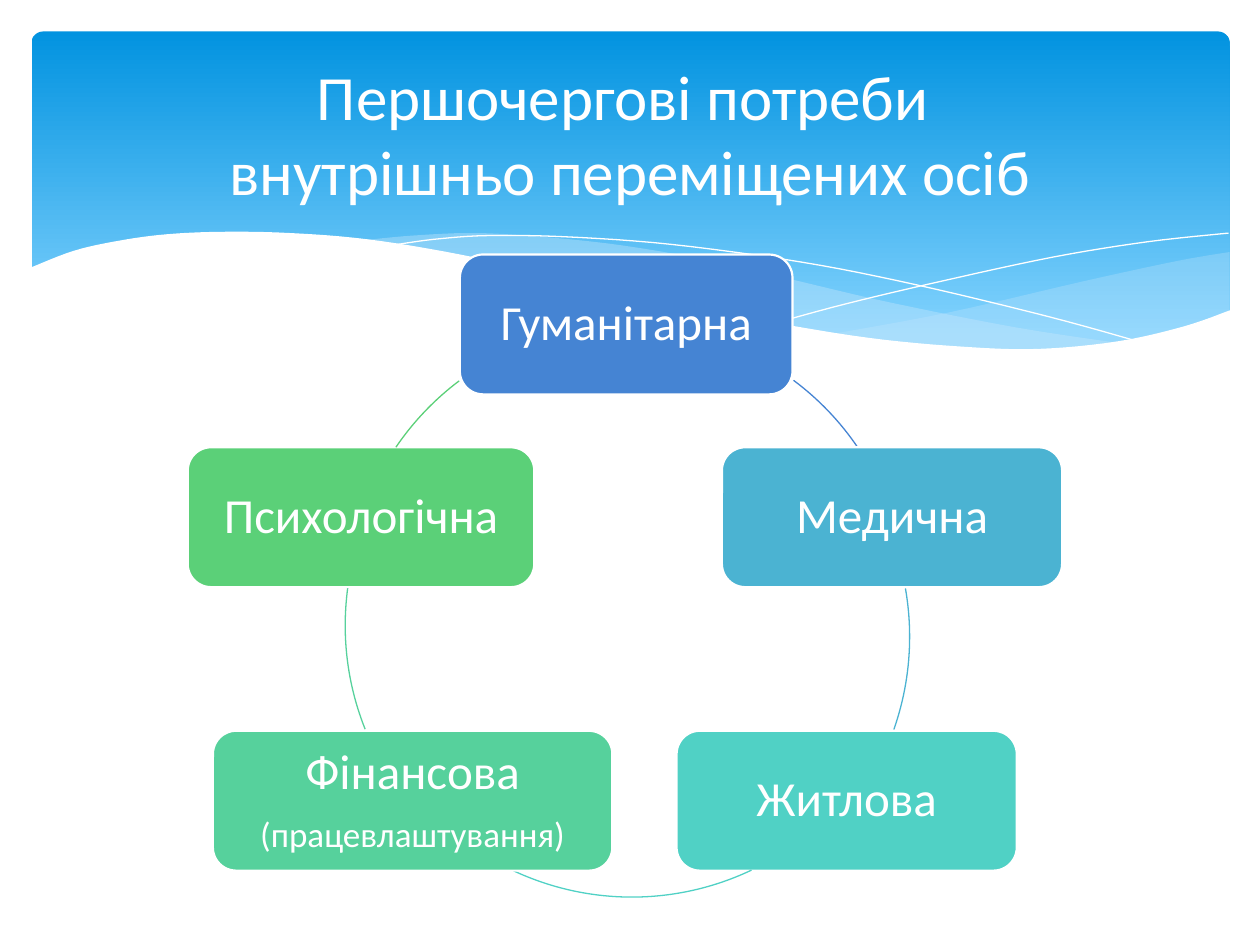
from pptx import Presentation
from pptx.dml.color import RGBColor
from pptx.enum.shapes import MSO_SHAPE as Shape
from pptx.enum.text import MSO_ANCHOR as Anchor, PP_ALIGN as Align
from pptx.oxml import parse_xml
from pptx.oxml.ns import nsdecls
from pptx.util import Inches, Pt

COLUMNS, ROWS = 100, 75
WHITE, MIST = "FFFFFF", "C6E7FC"


def color(value):
    return RGBColor.from_string(value)


def set_all(target, values):
    for name, value in values.items():
        setattr(target, name, value)


def smooth(points, steps=6):
    """Sample a Catmull-Rom curve that runs through the points."""
    ends = [points[0], *points, points[-1]]
    curve = [points[0]]
    for a, b, c, d in zip(ends, ends[1:], ends[2:], ends[3:]):
        for step in range(1, steps + 1):
            t = step / steps
            curve.append(tuple(
                (2 * q + (r - p) * t + (2 * p - 5 * q + 4 * r - s) * t ** 2
                 + (3 * q - p - 3 * r + s) * t ** 3) / 2
                for p, q, r, s in zip(a, b, c, d)))
    return curve


class Deck:
    font = "Calibri"

    def __init__(self):
        self.presentation = Presentation()
        set_all(self.presentation, {"slide_width": Inches(10), "slide_height": Inches(7.5)})
        self.slide = self.presentation.slides.add_slide(self.presentation.slide_layouts[5])
        self.column = self.presentation.slide_width / COLUMNS
        self.row = self.presentation.slide_height / ROWS

    def place(self, column, row, columns, rows):
        return [int(column * self.column), int(row * self.row),
                int(columns * self.column), int(rows * self.row)]

    def paint(self, shape, fill=None, alpha=100, line=None, width=0):
        shape.shadow.inherit = False
        if fill:
            shape.fill.solid()
            shape.fill.fore_color.rgb = color(fill)
            if alpha < 100:
                tint = shape.element.spPr.find(".//{*}srgbClr")
                tint.append(parse_xml(f'<a:alpha {nsdecls("a")} val="{alpha * 1000}"/>'))
        else:
            shape.fill.background()
        if line:
            shape.line.color.rgb = color(line)
            shape.line.width = Pt(width)
        else:
            shape.line.fill.background()

    def label(self, paragraph, text, size, **format_values):
        paragraph.text = text
        set_all(paragraph, {"alignment": Align.CENTER, **format_values})
        set_all(paragraph.font, {"name": self.font, "size": Pt(size), "bold": False})
        paragraph.font.color.rgb = color(WHITE)

    def title(self, text, area):
        shape = self.slide.shapes.title
        set_all(shape, dict(zip(("left", "top", "width", "height"), self.place(*area))))
        set_all(shape.text_frame, {"vertical_anchor": Anchor.MIDDLE, "word_wrap": True})
        self.label(shape.text_frame.paragraphs[0], text, 36)
        # Keep the title in front of everything drawn before it
        self.slide.shapes.element.append(shape.element)

    def banner(self, area, top, bottom):
        shape = self.slide.shapes.add_shape(Shape.ROUNDED_RECTANGLE, *self.place(*area))
        self.paint(shape)
        shape.adjustments[0] = 0.034
        shape.fill.gradient()
        shape.fill.gradient_angle = 270
        for stop, tint, position in zip(shape.fill.gradient_stops, (top, bottom), (0, 0.9)):
            stop.color.rgb = color(tint)
            stop.position = position

    def wave(self, *edges, **style):
        points = [self.place(x, y, 0, 0)[:2] for edge in edges for x, y in smooth(edge)]
        builder = self.slide.shapes.build_freeform(*points[0])
        builder.add_line_segments(points[1:], close=len(edges) > 1)
        self.paint(builder.convert_to_shape(), **style)

    def box(self, area, fill, lines):
        shape = self.slide.shapes.add_shape(Shape.ROUNDED_RECTANGLE, *self.place(*area))
        self.paint(shape, fill, line=WHITE, width=1.25)
        frame = shape.text_frame
        margins = dict.fromkeys(
            ("margin_left", "margin_top", "margin_right", "margin_bottom"), Inches(0.12))
        set_all(frame, {"word_wrap": True, "vertical_anchor": Anchor.MIDDLE, **margins})
        for index, (text, size) in enumerate(lines):
            paragraph = frame.add_paragraph() if index else frame.paragraphs[0]
            self.label(paragraph, text, size, line_spacing=0.9, space_after=Pt(size * 0.35))

    def arc(self, center, start, end, line, radius=22.15):
        x, y = center
        shape = self.slide.shapes.add_shape(
            Shape.ARC, *self.place(x - radius, y - radius, 2 * radius, 2 * radius))
        # Arc angles count 60000 units per degree, adjustments 100000 per one
        for index, degrees in enumerate((start, end)):
            shape.adjustments[index] = degrees * 0.6
        self.paint(shape, line=line, width=0.75)


def main():
    deck = Deck()

    # Header with its waves
    deck.banner((2.5, 2.5, 95.1, 27), "0293E0", "83D3FE")
    deck.wave([(97.6, 20), (93.5, 20.7), (86.1, 22.3), (75.3, 24.8), (66.1, 26.5)],
              [(66.1, 26.5), (71.9, 27.2), (76.9, 27.7), (81.4, 27.7), (86.3, 27.5),
               (90.5, 26.9), (94.2, 25.9), (97.6, 24.7)], fill=MIST, alpha=29)
    deck.wave([(89.3, 27.3), (80.7, 26), (70.6, 24), (62.9, 22.2), (56.9, 20.8),
               (50.2, 19.6), (44.2, 18.9), (38, 18.5), (32.8, 18.7), (28.6, 19.1)],
              [(28.6, 19.1), (36.2, 20.3), (44.9, 22.2), (56.6, 24.8), (66.5, 26.6),
               (73.6, 27.5), (79.6, 27.8), (84.8, 27.7), (89.3, 27.3)], fill=MIST, alpha=40)
    deck.wave([(30.9, 19.5), (34.4, 19), (38.7, 18.7), (45, 18.8), (53.3, 19.4),
               (63.6, 20.8), (72.7, 22.6), (83.1, 25.1), (90.7, 27.2)], line=WHITE)
    deck.wave([(61.3, 25.7), (67.2, 24.1), (74.8, 22.3), (83.6, 20.4), (91, 19.2),
               (97.5, 18.5)], line=WHITE)
    deck.wave([(97.7, 24.6), (94, 25.9), (88.7, 27.1), (82.3, 27.7), (76.1, 27.5),
               (68.8, 26.8), (60.3, 25.4), (52.9, 23.9), (44.7, 22), (36.5, 20.2),
               (29.2, 19), (23, 18.5), (17.7, 18.4), (13.2, 18.6), (9.5, 19.1),
               (5.9, 19.9), (2.3, 21.3)], [(2.3, 32.9), (97.7, 32.9)], fill=WHITE)

    # Cycle of needs: box area, colour, lines, then centre and angles of the arc
    needs = [
        ((36.5, 20.2, 26.4, 11.1), "4584D3", [("Гуманітарна", 28)],
         (49.75, 47.95), 306.7, 325.8),
        ((57.3, 35.5, 27, 11.1), "4BB3D2", [("Медична", 28)],
         (50.05, 50.55), 350, 19.4),
        ((53.7, 58, 27, 11.1), "50D1C5", [("Житлова", 28)],
         (50.15, 49.05), 64.6, 115.1),
        ((16.9, 58, 31.7, 11.1), "56D19C", [("Фінансова", 28), ("(працевлаштування)", 20)],
         (49.55, 49.65), 158.2, 187.7),
        ((14.9, 35.5, 27.5, 11.1), "5BD078", [("Психологічна", 28)],
         (49.75, 47.95), 214.2, 233.1),
    ]
    for area, tint, lines, center, start, end in needs:
        deck.box(area, tint, lines)
        deck.arc(center, start, end, tint)

    deck.title("Першочергові потреби \vвнутрішньо переміщених осіб", (5, 3.7, 90, 13.7))
    deck.presentation.save("out.pptx")


if __name__ == "__main__":
    main()
